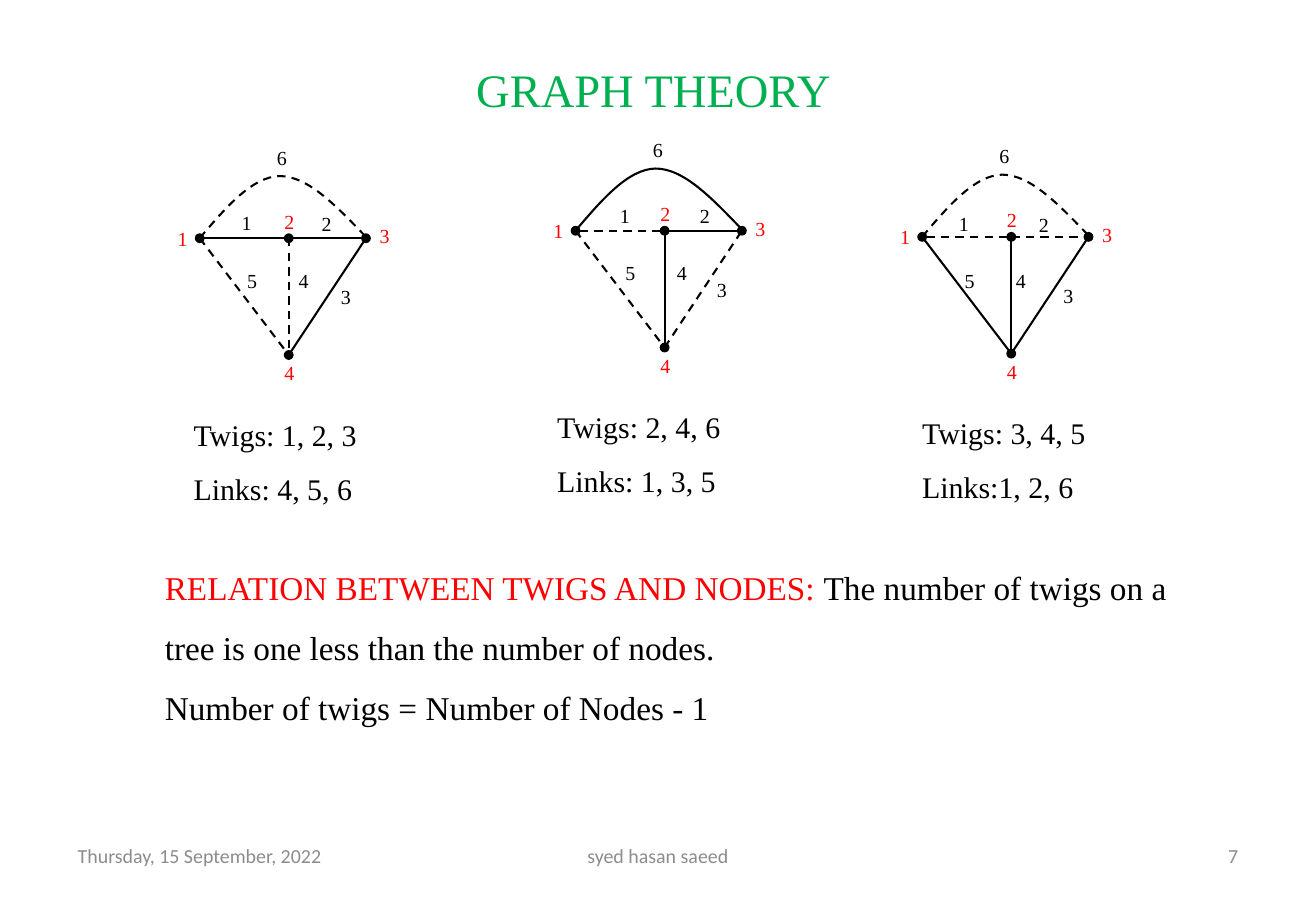
"""Build the slide on twigs, links and nodes of a graph."""
from lxml import etree
from pptx import Presentation
from pptx import util as u
from pptx.dml.color import RGBColor
from pptx.enum import dml, shapes, text
from pptx.oxml import ns

BLACK = RGBColor(0, 0, 0)
RED = RGBColor(0xFF, 0, 0)
GREEN = RGBColor(0, 0xB0, 0x50)
GRAY = RGBColor(0x8C, 0x8C, 0x8C)
SERIF = "Times New Roman"
ALIGN = text.PP_ALIGN
ANCHOR = text.MSO_ANCHOR

NODES = {1: (0, 0), 2: (1.89, 0), 3: (3.53, 0), 4: (1.89, 2.48)}
NAMES = {1: (-0.72, -0.38), 2: (1.55, -0.74), 3: (3.57, -0.43), 4: (1.55, 2.48)}
EDGES = {1: (1, 2, "head", "tail"), 2: (2, 3, "tail"), 4: (2, 4, "tail"),
         5: (1, 4), 3: (4, 3)}
MARKS = {1: (0.64, -0.71), 2: (2.34, -0.69), 3: (2.75, 0.87),
         4: (1.85, 0.51), 5: (0.76, 0.51), 6: (1.39, -2.1)}
ARC = [(0, 0), (0.56, -0.66), (1.12, -1.31), (1.7, -1.32),
       (2.31, -1.32), (2.92, -0.66), (3.53, -0.03)]
TREES = [
    (4.24, 5.06, 3.86, (0, 0), "1, 2, 3", "Links: 4, 5, 6"),
    (12.22, 4.9, 11.58, (0.05, 0), "2, 4, 6", "Links: 1, 3, 5"),
    (19.58, 5.03, 19.33, (-0.11, 0.05), "3, 4, 5", "Links:1, 2, 6"),
]


def apply(obj, form):
    """Set each attribute of obj named in form."""
    for key, val in form.items():
        setattr(obj, key, val)


class Board:
    """Holds the line style, the current slide and the current group."""

    def __init__(self, slide):
        """Start drawing straight on the slide."""
        self.slide = slide
        self.draw = slide.shapes
        self.pen = {"width": u.Pt(1.25)}

    def group(self):
        """Send the next elements to a new group."""
        self.draw = self.slide.shapes.add_group_shape().shapes

    def fill(self, frame, paras, size, font, form):
        """Write paragraphs of (words, colour) runs."""
        for i, runs in enumerate(paras):
            para = frame.add_paragraph() if i else frame.paragraphs[0]
            apply(para, form)
            for words, color in runs:
                run = para.add_run()
                run.text = words
                apply(run.font, {"size": u.Pt(size), "name": font})
                run.font.color.rgb = color

    def title(self, words, box):
        """Place and format the title."""
        shape = self.slide.shapes.title
        apply(shape, dict(zip(("left", "top", "width", "height"), map(u.Cm, box))))
        shape.text_frame.vertical_anchor = ANCHOR.MIDDLE
        self.fill(shape.text_frame, [[(words, GREEN)]], 28, SERIF,
                  {"alignment": ALIGN.CENTER})

    def note(self, box, paras, size=12, font=SERIF, anchor=ANCHOR.TOP, **form):
        """Add a wrapped text box."""
        frame = self.draw.add_textbox(*map(u.Cm, box)).text_frame
        apply(frame, {"word_wrap": True, "vertical_anchor": anchor})
        self.fill(frame, paras, size, font, form)

    def ink(self, shape, solid):
        """Give a shape a black line, solid or dashed."""
        apply(shape.line, self.pen)
        shape.line.color.rgb = BLACK
        if not solid:
            shape.line.dash_style = dml.MSO_LINE.DASH

    def edge(self, start, end, solid, dots):
        """Join two points, with dots at the named ends."""
        line = self.draw.add_connector(
            shapes.MSO_CONNECTOR.STRAIGHT, *map(u.Cm, (*start, *end)))
        self.ink(line, solid)
        for dot in dots:
            tag = ns.qn(f"a:{dot}End")
            etree.SubElement(line.line._get_or_add_ln(), tag, type="oval")
        etree.SubElement(line._element.spPr, ns.qn("a:effectLst"))

    def arc(self, points, solid):
        """Draw a chain of cubic curves through points."""
        first, *rest = [(u.Cm(x), u.Cm(y)) for x, y in points]
        form = self.draw.build_freeform(*first)
        form.add_line_segments(rest, close=False)
        shape = form.convert_to_shape()
        shape.shadow.inherit = False
        shape.fill.background()
        self.ink(shape, solid)
        legs = list(shape._element.iter(ns.qn("a:lnTo")))
        trace = legs[0].getparent()
        for i in range(0, len(legs), 3):
            curve = etree.SubElement(trace, ns.qn("a:cubicBezTo"))
            for leg in legs[i:i + 3]:
                curve.append(leg[0])
                trace.remove(leg)

    def tree(self, left, top, edge, shift, twigs, links):
        """Draw one tree of the graph with its caption."""
        def at(spot):
            return left + spot[0], top + spot[1]

        self.group()
        self.note((edge, top + 3.28, 5.36, 2.57),
                  [[("Twigs: " + twigs, BLACK)], [(links, BLACK)]],
                  18, line_spacing=1.5)
        for num, (start, end, *dots) in EDGES.items():
            self.edge(at(NODES[start]), at(NODES[end]), str(num) in twigs, dots)
        self.arc([at(spot) for spot in ARC], "6" in twigs)
        for spots, color in ((NAMES, RED), (MARKS, BLACK)):
            for num, spot in spots.items():
                x, y = at(spot)
                if spots is MARKS and num in (1, 2, 4, 5):
                    x, y = x + shift[0], y + shift[1]
                self.note((x, y, 0.58, 0.76), [[(str(num), color)]])


def main():
    """Build and save the slide."""
    deck = Presentation()
    apply(deck, {"slide_width": u.Cm(27.94), "slide_height": u.Cm(19.05)})
    board = Board(deck.slides.add_slide(deck.slide_layouts[5]))
    for left, width, words, align in (
            (1.4, 6.53, "Thursday, 15 September, 2022", ALIGN.LEFT),
            (9.55, 8.84, "syed hasan saeed", ALIGN.CENTER),
            (20.01, 6.53, "7", ALIGN.RIGHT)):
        board.note((left, 17.65, width, 1.02), [[(words, GRAY)]],
                   12, "Calibri", ANCHOR.MIDDLE, alignment=align)
    board.title("GRAPH THEORY", (0.66, 0.99, 26.42, 1.78))
    board.note((3.25, 11.51, 21.82, 3.96), [
        [("RELATION BETWEEN TWIGS AND NODES: ", RED),
         ("The number of twigs on a tree is one less than the number of nodes.", BLACK)],
        [("Number of twigs = Number of Nodes - 1", BLACK)]],
        20, line_spacing=1.5)
    for tree in TREES:
        board.tree(*tree)
    deck.save("out.pptx")


if __name__ == "__main__":
    main()
